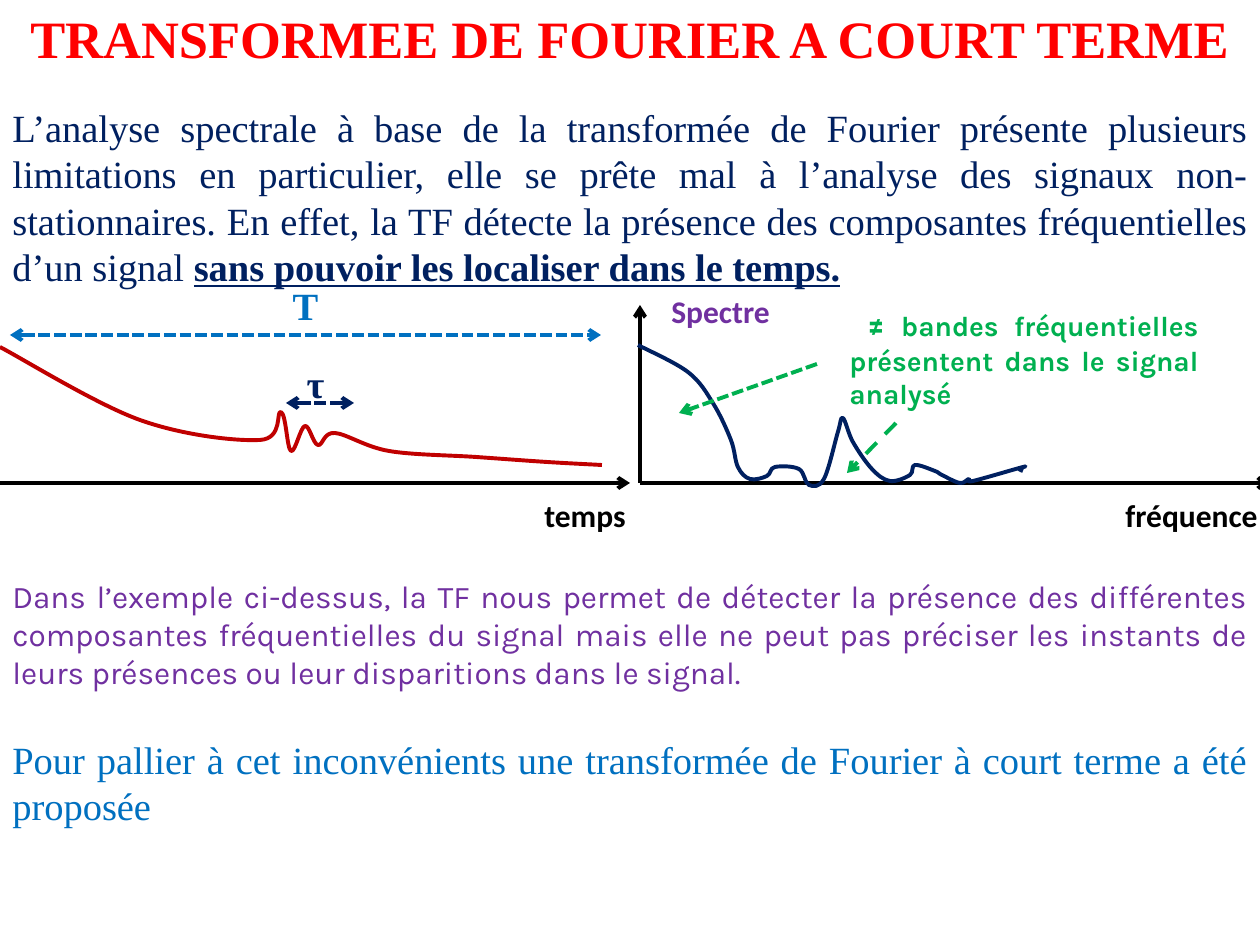
"""Build the slide on the short-time Fourier transform."""
import dataclasses

import pptx
import pptx.dml.color
import pptx.enum.dml
import pptx.enum.shapes
import pptx.enum.text
import pptx.oxml
import pptx.oxml.ns
import pptx.util

PX = 914400 / 126
ALIGN = pptx.enum.text.PP_ALIGN
DASH = pptx.enum.dml.MSO_LINE


@dataclasses.dataclass(frozen=True)
class Theme:
    """Hold the colours, fonts and type sizes."""
    red: str = "FF0000"
    navy: str = "002060"
    blue: str = "0070C0"
    purple: str = "7030A0"
    green: str = "00B050"
    brick: str = "C00000"
    black: str = "000000"
    serif: str = "Times New Roman"
    sans: str = "Calibri"
    round: str = "Karla"
    head: int = 30
    body: int = 22
    sign: int = 20
    label: int = 18
    note: int = 16
    stroke: float = 2.25


T = Theme()
SIGNAL = [(0, 67), (140, 140), (260, 160), (281, 132), (291, 171), (305, 146),
          (318, 165), (335, 153), (389, 171), (476, 177), (547, 182), (602, 185)]
BANDS = [(-2, 65), (48, 92), (73, 123), (91, 160), (98, 187), (110, 199),
         (127, 196), (135, 187), (159, 189), (169, 205), (184, 199), (198, 152),
         (203, 138), (213, 162), (232, 189), (250, 201), (270, 195), (275, 185),
         (295, 191), (302, 195), (320, 203), (329, 199), (333, 201), (383, 187),
         (379, 189), (383, 191)]


def emu(num):
    """Turn px into EMU."""
    return pptx.util.Emu(round(num * PX))


def rgb(code):
    """Turn a hex code into a colour."""
    return pptx.dml.color.RGBColor.from_string(code)


def write(para, text, font, size, color, bold=False, under=False):
    """Add one run to a paragraph."""
    run = para.add_run()
    run.text = text
    face = run.font
    face.name, face.size = font, pptx.util.Pt(size)
    face.bold, face.underline = bold, under
    face.color.rgb = rgb(color)


def block(slide, box, align=ALIGN.LEFT, wrap=True):
    """Add a text box and return its first paragraph and frame."""
    frame = slide.shapes.add_textbox(*map(emu, box)).text_frame
    frame.word_wrap = wrap
    para = frame.paragraphs[0]
    para.alignment = align
    return para, frame


def label(slide, box, text, color):
    """Add a short bold label."""
    para, _ = block(slide, box, wrap=False)
    write(para, text, T.sans, T.label, color, bold=True)


def ink(line, color):
    """Set the colour and width of a line."""
    line.color.rgb = rgb(color)
    line.width = pptx.util.Pt(T.stroke)


def arrow(slide, start, end, color, dash=None, both=False):
    """Draw a straight arrow, pointed at one end or both."""
    kind = pptx.enum.shapes.MSO_CONNECTOR.STRAIGHT
    link = slide.shapes.add_connector(kind, *map(emu, (*start, *end)))
    ink(link.line, color)
    if dash:
        link.line.dash_style = dash
    props = link.line._get_or_add_ln()
    for tag in ["a:headEnd", "a:tailEnd"] if both else ["a:tailEnd"]:
        tip = pptx.oxml.ns.qn(tag)
        props.append(props.makeelement(tip, {"type": "arrow"}))
    shape = link._element.spPr
    shape.append(shape.makeelement(pptx.oxml.ns.qn("a:effectLst"), {}))


def curve(slide, left, top, knots, color):
    """Draw a smooth line whose slope at each knot follows its neighbours."""
    pts = [(emu(left + x), emu(top + y)) for x, y in knots]
    ends = [pts[0], *pts, pts[-1]]
    slopes = [((c[0] - a[0]) / 6, (c[1] - a[1]) / 6)
              for a, c in zip(ends, ends[2:])]
    path = []
    for (p, u), (q, v) in zip(zip(pts, slopes), zip(pts[1:], slopes[1:])):
        path += [(p[0] + u[0], p[1] + u[1]), (q[0] - v[0], q[1] - v[1]), q]
    pen = slide.shapes.build_freeform(*pts[0])
    pen.add_line_segments(path, close=False)
    shape = pen.convert_to_shape()
    shape.shadow.inherit = False
    shape.fill.background()
    ink(shape.line, color)
    qn = pptx.oxml.ns.qn
    steps = list(shape._element.iter(qn("a:lnTo")))
    for i in range(0, len(steps), 3):
        bend = steps[i].makeelement(qn("a:cubicBezTo"), {})
        steps[i].addprevious(bend)
        for step in steps[i:i + 3]:
            bend.append(step[0])
            step.getparent().remove(step)


def title(slide, box):
    """Place the title."""
    head = slide.shapes.title
    head.left, head.top, head.width, head.height = map(emu, box)
    frame = head.text_frame
    frame.word_wrap = True
    frame.auto_size = pptx.enum.text.MSO_AUTO_SIZE.NONE
    frame.vertical_anchor = pptx.enum.text.MSO_ANCHOR.TOP
    para = frame.paragraphs[0]
    para.alignment = ALIGN.CENTER
    write(para, "TRANSFORMEE DE FOURIER A COURT TERME",
          T.serif, T.head, T.red, bold=True)


def intro(slide, box):
    """Place the opening paragraph."""
    para, _ = block(slide, box, ALIGN.JUSTIFY)
    write(para, "L’analyse spectrale à base de la transformée de Fourier présente "
          "plusieurs limitations en particulier, elle se prête mal à l’analyse des "
          "signaux non-stationnaires. En effet, la TF détecte la présence des "
          "composantes fréquentielles d’un signal ", T.serif, T.body, T.navy)
    write(para, "sans pouvoir les localiser dans le temps.",
          T.serif, T.body, T.navy, bold=True, under=True)


def timing(slide, left, top):
    """Draw the signal against time with its two spans."""
    arrow(slide, (left, top + 203), (left + 630, top + 203), T.black)
    curve(slide, left, top, SIGNAL, T.brick)
    spans = [(286, 354, 123, "τ", (286, 74, 59, 59), T.navy),
             (10, 601, 55, "T", (237, -4, 137, 59), T.blue)]
    for x, end, y, text, (dx, dy, wide, high), color in spans:
        arrow(slide, (left + x, top + y), (left + end, top + y), color,
              DASH.SQUARE_DOT, both=True)
        para, _ = block(slide, (left + dx, top + dy, wide, high), ALIGN.CENTER, False)
        write(para, text, T.serif, T.body, color, bold=True)
    label(slide, (left + 532, top + 210, 129, 50), "temps", T.black)


def spectrum(slide, left, top):
    """Draw the spectrum with the note on its bands."""
    base = (left, top + 203)
    arrow(slide, base, (left + 630, top + 203), T.black)
    arrow(slide, base, (left, top + 25), T.black)
    label(slide, (left + 473, top + 210, 158, 50), "fréquence", T.black)
    label(slide, (left + 19, top + 6, 129, 50), "Spectre", T.purple)
    curve(slide, left, top, BANDS, T.navy)
    para, _ = block(slide, (left + 197, top + 15, 374, 123), ALIGN.JUSTIFY)
    write(para, " ≠", T.round, T.sign, T.green, bold=True)
    write(para, " bandes fréquentielles présentent dans le signal analysé",
          T.round, T.note, T.green, bold=True)
    arrow(slide, (left + 177, top + 84), (left + 39, top + 133), T.green,
          DASH.SQUARE_DOT)
    arrow(slide, (left + 256, top + 143), (left + 207, top + 193), T.green, DASH.DASH)


def closing(slide, box):
    """Place the remark and the proposal."""
    para, frame = block(slide, box, ALIGN.JUSTIFY)
    write(para, "Dans l’exemple ci-dessus, la TF nous permet de détecter la présence "
          "des différentes composantes fréquentielles du signal mais elle ne peut pas "
          "préciser les instants de leurs présences ou leur disparitions dans le "
          "signal.", T.round, T.label, T.purple)
    para = frame.add_paragraph()
    para.alignment = ALIGN.JUSTIFY
    para.space_before = pptx.util.Pt(26)
    write(para, "Pour pallier à cet inconvénients une transformée de Fourier à court "
          "terme a été proposée", T.serif, T.body, T.blue)


def main():
    """Build and save the slide."""
    deck = pptx.Presentation()
    deck.slide_width, deck.slide_height = emu(1260), emu(945)
    slide = deck.slides.add_slide(deck.slide_layouts[5])
    intro(slide, (0, 98, 1260, 525))
    title(slide, (0, 0, 1260, 77))
    timing(slide, 0, 280)
    spectrum(slide, 640, 280)
    closing(slide, (0, 571, 1260, 267))
    deck.save("out.pptx")


if __name__ == "__main__":
    main()
